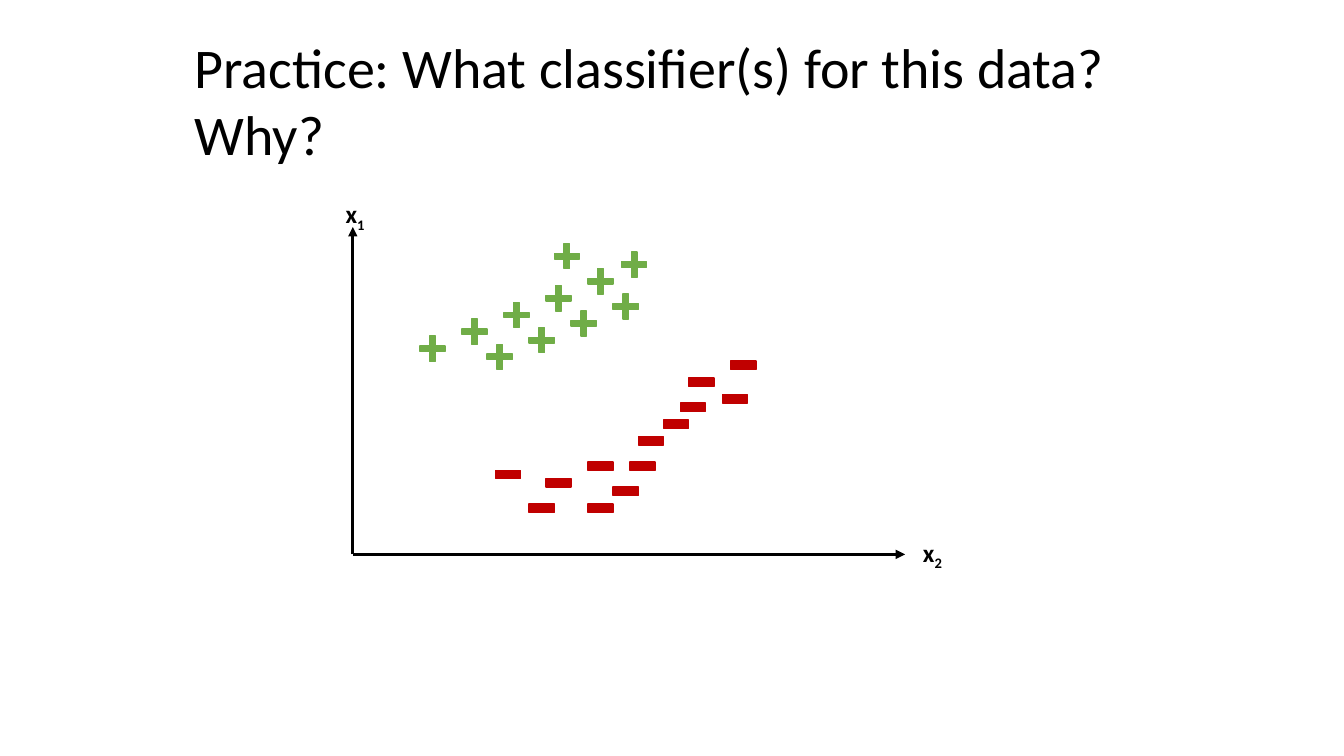
"""Build a slide asking which classifier suits a two-class scatter of points."""
import pptx
import pptx.util
import pptx.dml.color
import pptx.enum.shapes
import pptx.enum.text
import pptx.oxml
import pptx.oxml.ns
import lxml.etree

Cm, Pt = pptx.util.Cm, pptx.util.Pt
RGBColor = pptx.dml.color.RGBColor
Kind = pptx.enum.shapes.MSO_SHAPE
Fit = pptx.enum.text.MSO_AUTO_SIZE
qn = pptx.oxml.ns.qn

BLACK = RGBColor(0x00, 0x00, 0x00)
GREEN = RGBColor(0x70, 0xAD, 0x47)
RED = RGBColor(0xC0, 0x00, 0x00)
STEP = 2.54 / 12


def write(para, text, size=18, bold=False, base=0):
    run = para.add_run()
    run.text = text
    run.font.name = "Calibri"
    run.font.size = Pt(size)
    run.font.bold = bold
    run.font.color.rgb = BLACK
    if base:
        run.font._element.set("baseline", str(base * 1000))


deck = pptx.Presentation()
deck.slide_width, deck.slide_height = Cm(33.87), Cm(19.05)
slide = deck.slides.add_slide(deck.slide_layouts[5])
shapes = slide.shapes

title = shapes.title
title.left, title.top = Cm(4.65), Cm(0.66)
title.width, title.height = Cm(24.56), Cm(3.68)
frame = title.text_frame
frame.word_wrap = True
frame.auto_size = Fit.NONE
frame.vertical_anchor = pptx.enum.text.MSO_ANCHOR.MIDDLE
para = frame.paragraphs[0]
para.alignment = pptx.enum.text.PP_ALIGN.LEFT
write(para, "Practice: What classifier(s) for this data? Why?", size=40)

for right, top in [(8.89, 5.72), (22.81, 13.97)]:
    axis = shapes.add_connector(pptx.enum.shapes.MSO_CONNECTOR.STRAIGHT,
                                Cm(8.89), Cm(13.97), Cm(right), Cm(top))
    axis.line.color.rgb = BLACK
    axis.line.width = Pt(2.25)
    tail = lxml.etree.SubElement(axis.line._get_or_add_ln(), qn("a:tailEnd"))
    tail.set("type", "triangle")
    lxml.etree.SubElement(axis._element.spPr, qn("a:effectLst"))

for left, top, index in [(8.46, 4.88, "1"), (23.01, 13.41, "2")]:
    label = shapes.add_textbox(Cm(left), Cm(top), Cm(1.02), Cm(1.02))
    frame = label.text_frame
    frame.word_wrap = False
    frame.auto_size = Fit.SHAPE_TO_FIT_TEXT
    write(frame.paragraphs[0], "x", bold=True)
    write(frame.paragraphs[0], index, bold=True, base=-25)

plus = [(50, 40), (55, 38), (60, 36), (65, 34), (58, 41), (63, 39),
        (68, 37), (70, 32), (73, 35), (66, 29), (74, 30)]
minus = [(59, 56), (63, 60), (65, 57), (70, 60), (73, 58), (75, 55), (76, 52),
         (70, 55), (79, 50), (81, 48), (82, 45), (86, 47), (87, 43)]

for kind, color, high, spots in [(Kind.CROSS, GREEN, 3, plus),
                                 (Kind.RECTANGLE, RED, 1, minus)]:
    for col, row in spots:
        mark = shapes.add_shape(kind, Cm(col * STEP), Cm(row * STEP),
                                Cm(3 * STEP), Cm(high * STEP))
        mark.shadow.inherit = False
        mark.fill.solid()
        mark.fill.fore_color.rgb = color
        mark.line.color.rgb = color
        mark.line.width = Pt(1)
        if kind == Kind.CROSS:
            mark.adjustments[0] = 0.39

deck.save("out.pptx")
